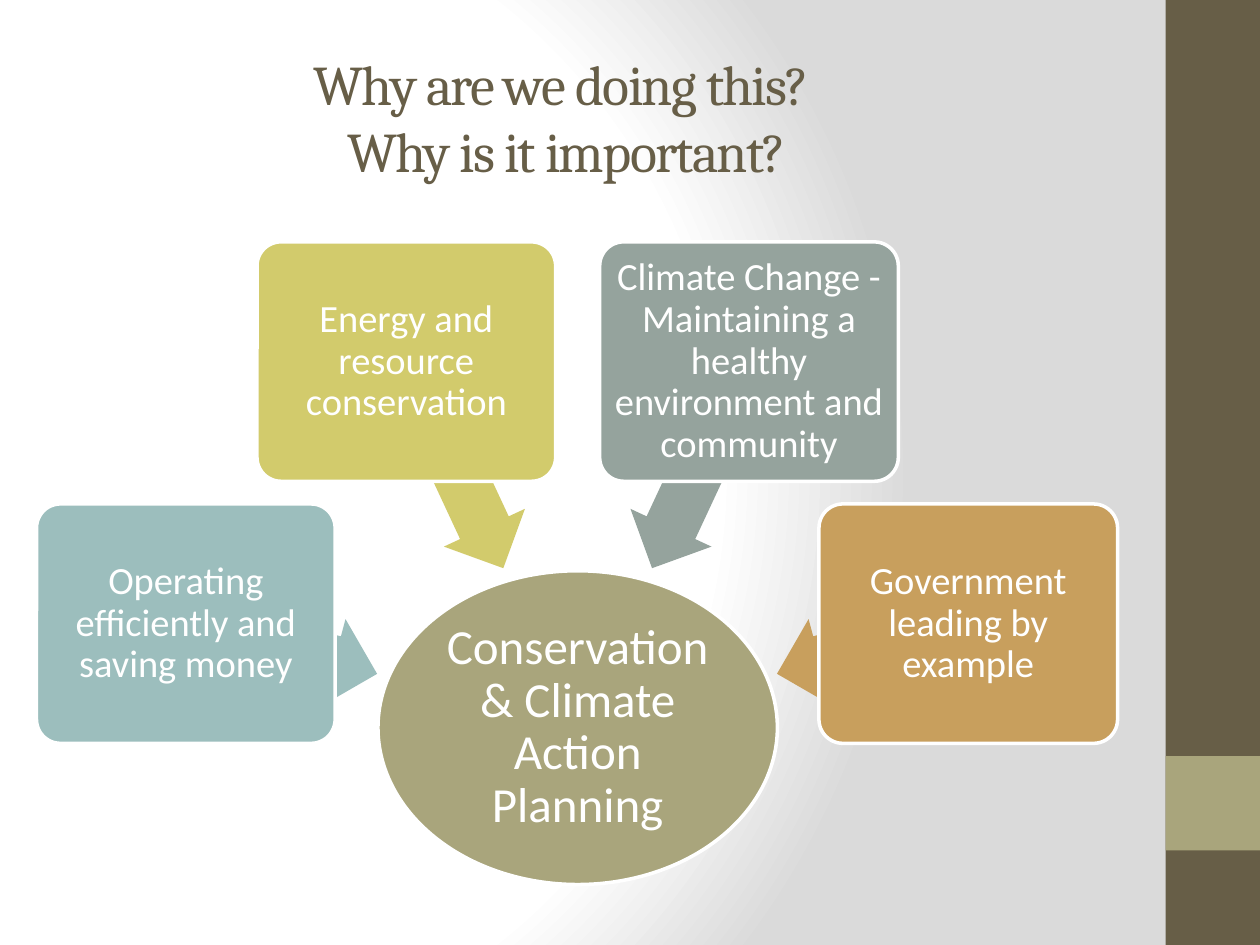
import pptx
import pptx.dml.color
import pptx.enum.shapes
import pptx.enum.text
import pptx.oxml
import pptx.oxml.ns
import pptx.util

Inches = pptx.util.Inches
Pt = pptx.util.Pt
Kind = pptx.enum.shapes.MSO_SHAPE

COLORS = {
    "white": "FFFFFF", "gray": "DADADA", "brown": "675E47", "olive": "A9A57C",
    "teal": "9CBEBD", "lime": "D2CB6C", "sage": "95A39D", "tan": "C89F5D",
}
REASONS = [
    ("Operating efficiently and saving money", "teal", (0.29, 4), (1.45, 4.79, 1.57), 195),
    ("Energy and resource conservation", "lime", (2.04, 1.92), (2.7, 3.33, 1.82), 245),
    ("Climate Change - Maintaining a healthy environment and community", "sage",
     (4.76, 1.92), (4.65, 3.33, 1.82), 295),
    ("Government leading by example", "tan", (6.5, 4), (6.14, 4.79, 1.57), 345),
]


class Deck:
    """Holds the style and the current slide, and draws each kind of element."""

    def __init__(self):
        self.show = pptx.Presentation()
        self.show.slide_width, self.show.slide_height = Inches(10), Inches(7.5)
        self.slide = self.show.slides.add_slide(self.show.slide_layouts[5])

    def color(self, name):
        return pptx.dml.color.RGBColor.from_string(COLORS[name])

    def backdrop(self):
        fill = self.slide.background.fill
        fill.solid()
        old = self.slide.element.find(".//" + pptx.oxml.ns.qn("a:solidFill"))
        stops = "".join(
            f'<a:gs pos="{pos}000"><a:srgbClr val="{COLORS[name]}"/></a:gs>'
            for pos, name in ((0, "white"), (75, "white"), (100, "gray")))
        grad = pptx.oxml.parse_xml(
            f'<a:gradFill {pptx.oxml.ns.nsdecls("a")} rotWithShape="1">'
            f'<a:gsLst>{stops}</a:gsLst><a:path path="circle">'
            '<a:fillToRect l="20000" t="50000" r="100000" b="50000"/>'
            '</a:path></a:gradFill>')
        old.getparent().replace(old, grad)

    def letter(self, frame, text, size, font, color, inset):
        frame.text = text
        frame.word_wrap = True
        frame.auto_size = pptx.enum.text.MSO_AUTO_SIZE.NONE
        frame.vertical_anchor = pptx.enum.text.MSO_ANCHOR.MIDDLE
        frame.margin_left = frame.margin_right = Inches(inset)
        frame.margin_top = frame.margin_bottom = Inches(inset)
        for par in frame.paragraphs:
            par.alignment = pptx.enum.text.PP_ALIGN.CENTER
            for run in par.runs:
                run.font.size = Pt(size)
                run.font.name = font
                run.font.color.rgb = self.color(color)

    def title(self, text, left, top, width, height):
        head = self.slide.shapes.title
        head.left, head.top = Inches(left), Inches(top)
        head.width, head.height = Inches(width), Inches(height)
        self.letter(head.text_frame, text, 32, "Cambria", "brown", 0.05)
        for run in head.text_frame.paragraphs[0].runs:
            run.font._element.set("spc", "-100")

    def shape(self, kind, left, top, width, height, color):
        item = self.slide.shapes.add_shape(
            kind, Inches(left), Inches(top), Inches(width), Inches(height))
        item.shadow.inherit = False
        item.fill.solid()
        item.fill.fore_color.rgb = self.color(color)
        item.line.fill.background()
        return item

    def label(self, kind, left, top, width, height, color, text, size, inset):
        item = self.shape(kind, left, top, width, height, color)
        item.line.color.rgb = self.color("white")
        item.line.width = Pt(2)
        self.letter(item.text_frame, text, size, "Calibri", "white", inset)
        item.text_frame.paragraphs[0].line_spacing = 0.9
        return item

    def arrow(self, left, top, width, color, angle):
        item = self.shape(Kind.LEFT_ARROW, left, top, width, 0.71, color)
        item.adjustments[0], item.adjustments[1] = 0.6, 0.5
        item.rotation = angle

    def box(self, left, top, color, text):
        item = self.label(Kind.ROUNDED_RECTANGLE, left, top, 2.37, 1.9, color, text, 22, 0.05)
        item.adjustments[0] = 0.1


def main():
    deck = Deck()
    deck.backdrop()
    deck.shape(Kind.RECTANGLE, 9.25, 0, 0.75, 7.5, "brown")
    deck.shape(Kind.RECTANGLE, 9.25, 6, 0.75, 0.75, "olive")
    deck.title("Why are we doing this? \vWhy is it important?", -0.5, 0.3, 10, 1.25)
    deck.label(Kind.OVAL, 3, 4.53, 3.17, 2.49, "olive",
               "Conservation & Climate Action Planning", 28, 0.02)
    for text, color, spot, shaft, angle in REASONS:
        deck.arrow(*shaft, color, angle)
        deck.box(*spot, color, text)
    deck.show.save("out.pptx")


if __name__ == "__main__":
    main()
